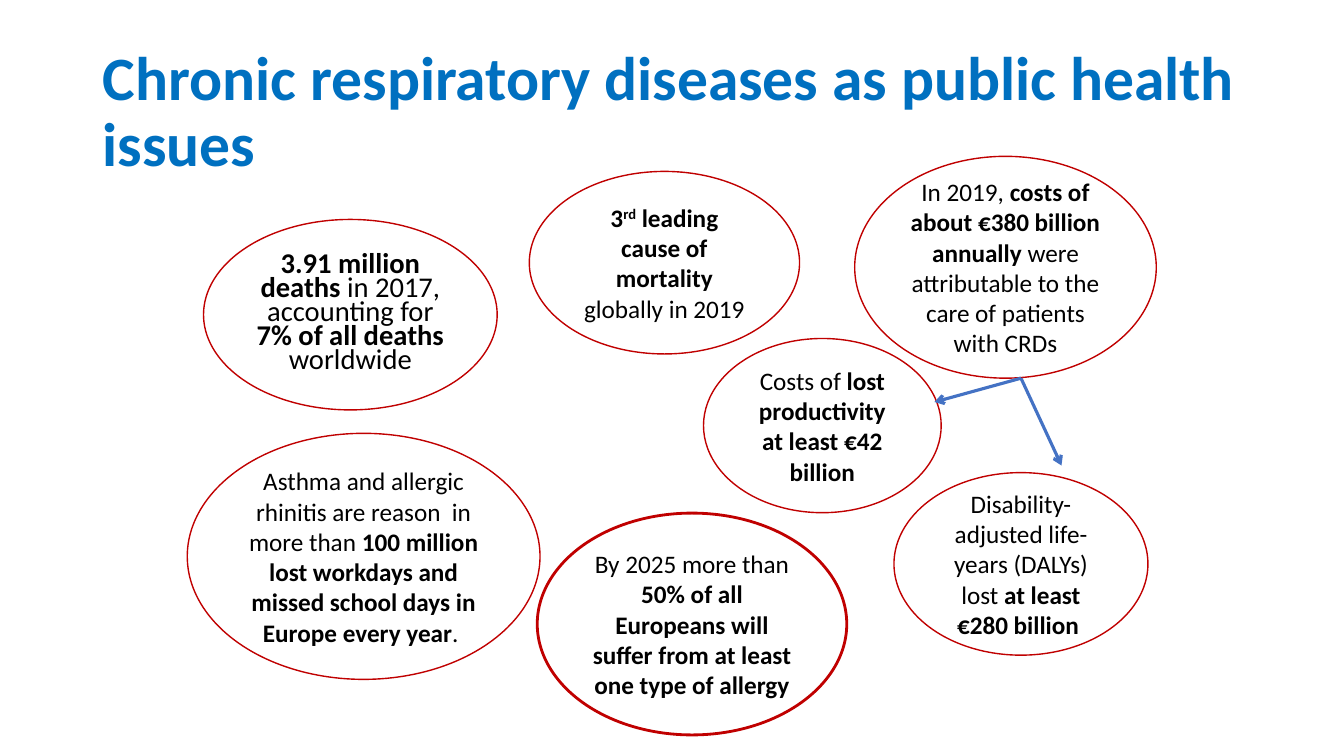
from dataclasses import dataclass

from lxml.etree import SubElement
from pptx import Presentation
from pptx.dml.color import RGBColor
from pptx.enum.shapes import MSO_CONNECTOR, MSO_SHAPE
from pptx.enum.text import MSO_ANCHOR, PP_ALIGN
from pptx.oxml.ns import qn
from pptx.slide import Slide
from pptx.util import Cm, Pt

FONT = "Calibri"
BLUE, RED, BLACK, ARROW_BLUE = "0070C0", "C00000", "000000", "4472C4"
BOLD, SUPER = "b", "s"


@dataclass
class Fact:
    """An ellipse; its text is a list of (words, style) pieces."""
    left: float
    top: float
    width: float
    height: float
    pieces: list[tuple[str, str]]
    size: float = 18
    outline: float = 1
    line_spacing: float = 1.0
    space_before: float = 0


@dataclass
class Arrow:
    end_x: float
    end_y: float


FACTS = [
    Fact(13.34, 4.32, 6.81, 4.6, [
        ("3", BOLD), ("rd", BOLD + SUPER), (" leading cause of mortality ", BOLD),
        ("globally in 2019", "")]),
    Fact(5.13, 5.53, 7.4, 4.8, [
        ("3.91 million deaths ", BOLD), ("in 2017, accounting for ", ""),
        ("7% of all deaths ", BOLD), ("worldwide", "")],
        size=20.4, line_spacing=0.7, space_before=5),
    Fact(21.54, 3.94, 7.6, 5.59, [
        ("In 2019, ", ""), ("costs of about €380 billion annually ", BOLD),
        ("were attributable to the care of patients with CRDs", "")]),
    Fact(22.53, 11.91, 6.4, 4.6, [
        ("Disability-adjusted life-years (DALYs) lost ", ""),
        ("at least €280 billion ", BOLD)]),
    Fact(13.54, 12.93, 7.8, 5.59, [
        ("By 2025 more than ", ""),
        ("50% of all Europeans will suffer from at least one type of allergy", BOLD)],
        outline=2, space_before=3.6),
    Fact(4.72, 10.92, 8.89, 6.2, [
        ("Asthma and allergic rhinitis are reason  in more than ", ""),
        ("100 million lost workdays and missed school days in Europe every year", BOLD),
        (". ", "")]),
    Fact(17.73, 8.53, 5.99, 4.39, [
        ("Costs of ", ""), ("lost productivity at least €42 billion", BOLD)]),
]

# Both arrows leave the foot of the care-cost ellipse
ARROW_START = (25.73, 9.53)
ARROWS = [Arrow(23.55, 10.13), Arrow(26.75, 11.73)]


def color(hex_code: str) -> RGBColor:
    return RGBColor.from_string(hex_code)


def add_title(slide: Slide, words: str) -> None:
    title = slide.shapes.add_textbox(Cm(2.34), Cm(1.02), Cm(29.21), Cm(3.68))
    frame = title.text_frame
    frame.word_wrap = True
    frame.vertical_anchor = MSO_ANCHOR.MIDDLE
    frame.text = words
    heading = frame.paragraphs[0]
    heading.line_spacing = 0.9
    font = heading.runs[0].font
    font.name, font.size, font.bold = FONT, Pt(44), True
    font.color.rgb = color(BLUE)


def add_fact(slide: Slide, fact: Fact) -> None:
    ellipse = slide.shapes.add_shape(
        MSO_SHAPE.OVAL, Cm(fact.left), Cm(fact.top), Cm(fact.width), Cm(fact.height))
    ellipse.shadow.inherit = False
    ellipse.fill.background()
    ellipse.line.color.rgb = color(RED)
    ellipse.line.width = Pt(fact.outline)
    frame = ellipse.text_frame
    frame.word_wrap = True
    frame.vertical_anchor = MSO_ANCHOR.MIDDLE
    statement = frame.paragraphs[0]
    statement.alignment = PP_ALIGN.CENTER
    statement.line_spacing = fact.line_spacing
    statement.space_before = Pt(fact.space_before)
    for words, style in fact.pieces:
        run = statement.add_run()
        run.text = words
        font = run.font
        font.name, font.size, font.bold = FONT, Pt(fact.size), BOLD in style
        font.color.rgb = color(BLACK)
        if SUPER in style:
            font._element.set("baseline", "30000")


def add_arrow(slide: Slide, arrow: Arrow) -> None:
    start_x, start_y = ARROW_START
    connector = slide.shapes.add_connector(
        MSO_CONNECTOR.STRAIGHT, Cm(start_x), Cm(start_y), Cm(arrow.end_x), Cm(arrow.end_y))
    connector.line.color.rgb = color(ARROW_BLUE)
    connector.line.width = Pt(2.25)
    SubElement(connector.line._get_or_add_ln(), qn("a:tailEnd"), type="arrow")
    SubElement(connector._element.spPr, qn("a:effectLst"))


def main() -> None:
    presentation = Presentation()
    presentation.slide_width, presentation.slide_height = Cm(33.87), Cm(19.05)
    slide = presentation.slides.add_slide(presentation.slide_layouts[6])

    # Heading
    add_title(slide, "Chronic respiratory diseases as public health issues")

    # Facts in ellipses
    for fact in FACTS:
        add_fact(slide, fact)

    # Arrows to the further costs
    for arrow in ARROWS:
        add_arrow(slide, arrow)

    presentation.save("out.pptx")


if __name__ == "__main__":
    main()
